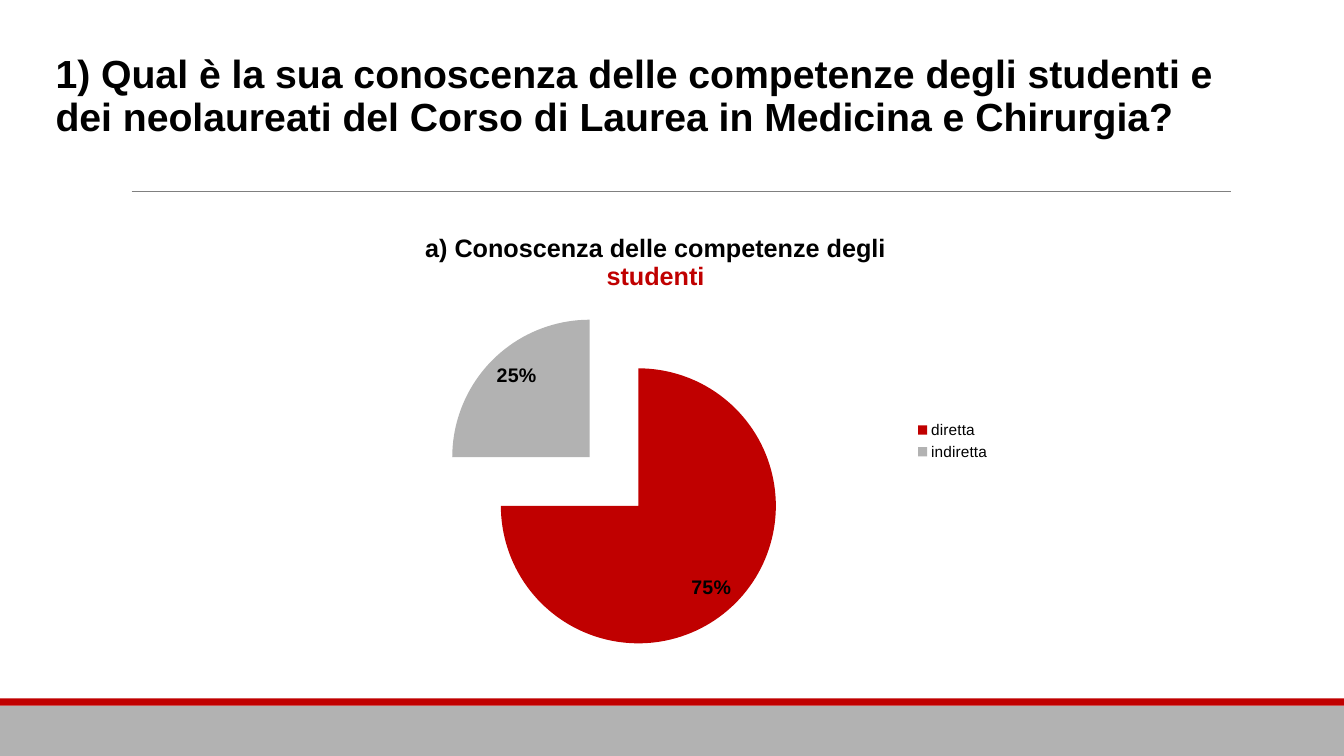
from lxml import etree
from pptx import Presentation
from pptx.chart.data import CategoryChartData
from pptx.dml.color import RGBColor
from pptx.enum.chart import XL_CHART_TYPE, XL_LABEL_POSITION, XL_LEGEND_POSITION
from pptx.enum.shapes import MSO_CONNECTOR, MSO_SHAPE
from pptx.enum.text import MSO_ANCHOR
from pptx.oxml import parse_xml
from pptx.oxml.ns import nsdecls, qn
from pptx.util import Cm, Pt

PIE = XL_CHART_TYPE.PIE
INSIDE_END = XL_LABEL_POSITION.INSIDE_END
LEGEND_RIGHT = XL_LEGEND_POSITION.RIGHT
STRAIGHT = MSO_CONNECTOR.STRAIGHT
RECT = MSO_SHAPE.RECTANGLE
MIDDLE = MSO_ANCHOR.MIDDLE

FONT = "Arial"
COLORS = {"red": "C00000", "gray": "B2B2B2", "rule": "808080", "text": "000000"}
SLIDE_W, SLIDE_H = 33.87, 19.05


def rgb(name):
    """Return the named colour."""
    return RGBColor.from_string(COLORS[name])


def style_font(font, size, bold=False, color="text"):
    """Set the face, size, weight and colour of a font."""
    font.name, font.size, font.bold = FONT, Pt(size), bold
    font.color.rgb = rgb(color)


def add_band(s, x, y, w, h, color):
    """Add a plain filled rectangle."""
    sp = s.shapes.add_shape(RECT, Cm(x), Cm(y), Cm(w), Cm(h))
    sp.shadow.inherit = False
    sp.fill.solid()
    sp.fill.fore_color.rgb = rgb(color)
    sp.line.fill.background()


def add_footer(s, x, y, w, h, stripe=0.18):
    """Add the gray footer with its red stripe on top."""
    add_band(s, x, y + stripe, w, h - stripe, "gray")
    add_band(s, x, y, w, stripe, "red")


def add_rule(s, x, y, w):
    """Add the thin horizontal rule under the heading."""
    line = s.shapes.add_connector(STRAIGHT, Cm(x), Cm(y), Cm(x + w), Cm(y))
    line.line.color.rgb = rgb("rule")
    line.line.width = Pt(0.5)
    etree.SubElement(line._element.spPr, qn("a:effectLst"))


def add_heading(s, x, y, w, h, text):
    """Add the question as a bold heading."""
    tf = s.shapes.add_textbox(Cm(x), Cm(y), Cm(w), Cm(h)).text_frame
    tf.word_wrap = True
    tf.vertical_anchor = MIDDLE
    tf.margin_left = tf.margin_right = tf.margin_top = tf.margin_bottom = 0
    p = tf.paragraphs[0]
    p.line_spacing = 0.9
    r = p.add_run()
    r.text = text
    style_font(r.font, 28, True)


def set_plot_layout(chart, **box):
    """Place the plot area at fractions x, y, w, h of the chart."""
    modes = "".join(f'<c:{k}Mode val="edge"/>' for k in "xy")
    sizes = "".join(f'<c:{k} val="{v}"/>' for k, v in box.items())
    layout = parse_xml(
        f'<c:layout {nsdecls("c")}><c:manualLayout><c:layoutTarget val="inner"/>'
        f"{modes}{sizes}</c:manualLayout></c:layout>")
    plot_area = chart._chartSpace.chart.plotArea
    for old in plot_area.findall(qn("c:layout")):
        plot_area.remove(old)
    plot_area.insert(0, layout)


def add_knowledge_pie(s, x, y, w, h, title, shares):
    """Add the exploded pie; shares holds (label, value, colour)."""
    data = CategoryChartData()
    data.categories = [label for label, _, _ in shares]
    data.add_series("Series 1", [value for _, value, _ in shares])
    chart = s.shapes.add_chart(PIE, Cm(x), Cm(y), Cm(w), Cm(h), data).chart
    style_font(chart.font, 10)
    chart.has_title = True
    p = chart.chart_title.text_frame.paragraphs[0]
    for text, color in title:
        r = p.add_run()
        r.text = text
        style_font(r.font, 18, True, color)
    chart.chart_title.include_in_layout = False
    chart.has_legend = True
    chart.legend.position = LEGEND_RIGHT
    chart.legend.include_in_layout = False
    style_font(chart.legend.font, 11)

    plot = chart.plots[0]
    plot.vary_by_categories = True
    series = plot.series[0]
    for i, (_, _, color) in enumerate(shares):
        fill = series.points[i].format.fill
        fill.solid()
        fill.fore_color.rgb = rgb(color)
    explosion = parse_xml(f'<c:explosion {nsdecls("c")} val="25"/>')
    series._element.find(qn("c:dPt")).addprevious(explosion)
    labels = series.data_labels
    labels.show_percentage = True
    labels.show_value = False
    labels.number_format = "0%"
    labels.number_format_is_linked = False
    labels.position = INSIDE_END
    style_font(labels.font, 14, True)
    set_plot_layout(chart, x=0.19, y=0.21, w=0.5, h=0.76)


def main():
    """Build and save the slide."""
    prs = Presentation()
    prs.slide_width, prs.slide_height = Cm(SLIDE_W), Cm(SLIDE_H)
    s = prs.slides.add_slide(prs.slide_layouts[6])
    add_footer(s, 0, 17.6, SLIDE_W, SLIDE_H - 17.6)
    add_rule(s, 3.32, 4.82, 27.69)
    add_heading(s, 1.4, 0.2, 30.28, 4.5,
                "1) Qual è la sua conoscenza delle competenze degli studenti e "
                "dei neolaureati del Corso di Laurea in Medicina e Chirurgia?")
    add_knowledge_pie(s, 7.82, 5.41, 17.4, 11.4,
                      [("a) Conoscenza delle competenze degli ", "text"),
                       ("studenti", "red")],
                      [("diretta", 75, "red"), ("indiretta", 25, "gray")])
    prs.save("out.pptx")


if __name__ == "__main__":
    main()
